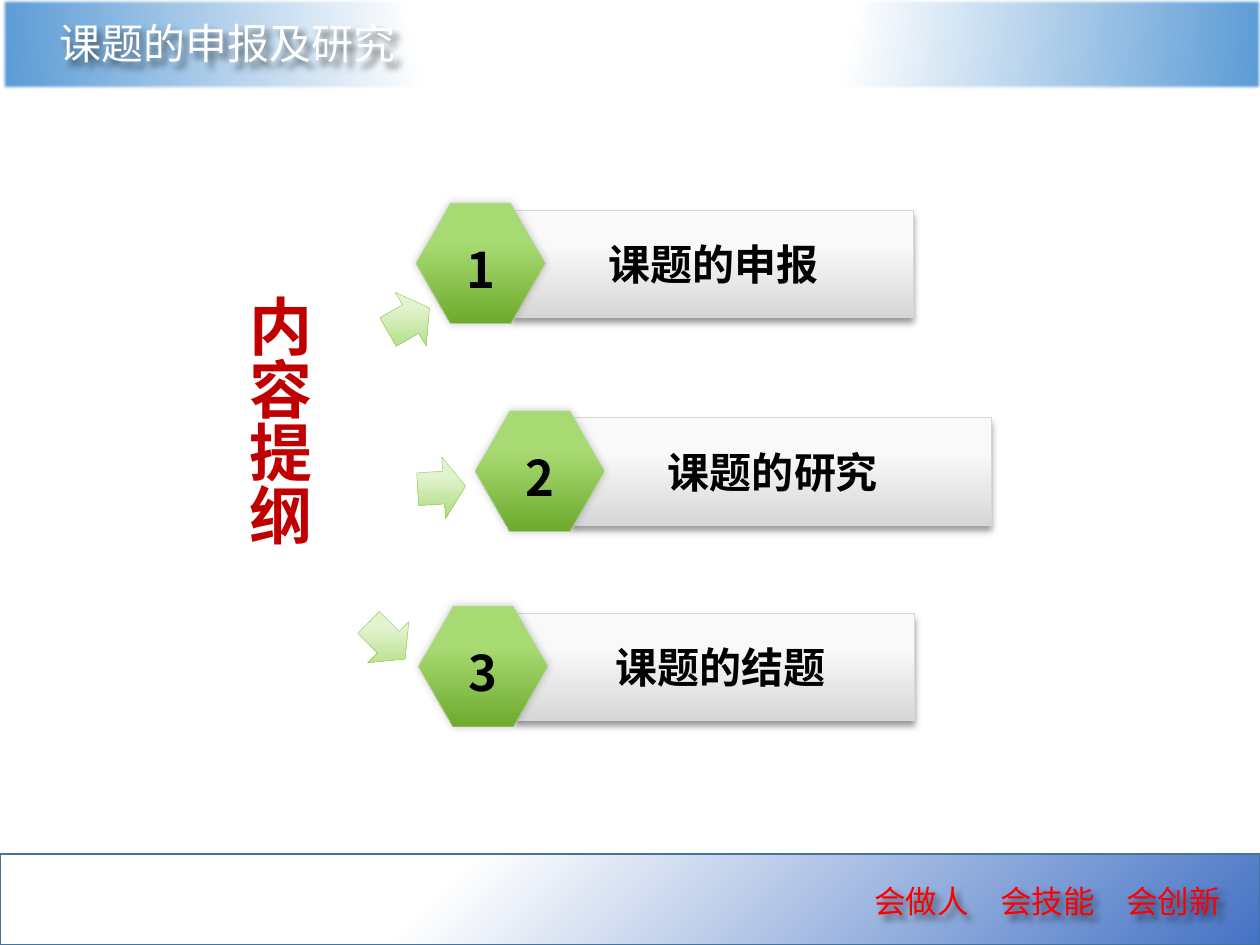
from pptx import Presentation
from pptx.dml.color import RGBColor
from pptx.enum.shapes import MSO_SHAPE
from pptx.enum.text import MSO_ANCHOR, MSO_AUTO_SIZE, PP_ALIGN
from pptx.oxml import parse_xml
from pptx.oxml.ns import nsdecls, qn
from pptx.util import Inches, Pt

RECT, HEX, ARROW = MSO_SHAPE.RECTANGLE, MSO_SHAPE.HEXAGON, MSO_SHAPE.UP_ARROW
LEFT, CENTER = PP_ALIGN.LEFT, PP_ALIGN.CENTER
TOP, MIDDLE = MSO_ANCHOR.TOP, MSO_ANCHOR.MIDDLE

TITLE = "课题的申报及研究"
SIDE = "内容提纲"
MOTTO = ["会做人", "会技能", "会创新"]
# label, hexagon left/top, bar width, label shift, arrow left/top/width/height/turn
STEPS = [
    ("课题的申报", 3.30, 1.61, 3.18, 0, (3.00, 2.35, 0.49, 0.38, 60)),
    ("课题的研究", 3.77, 3.26, 3.33, -0.07, (3.26, 3.68, 0.49, 0.38, 86.3)),
    ("课题的结题", 3.32, 4.81, 3.17, 0.04, (2.84, 4.88, 0.46, 0.41, 135.1)),
]

THEME = {
    "font": "Noto Sans CJK SC", "motto font": "Noto Sans CJK JP",
    "white": "FFFFFF", "black": "000000", "red": "FF0000", "dark red": "C00000",
    "edge": "D7D7D7", "arrow edge": "92D050", "foot edge": "43739E",
    "bar": [(33, "F9F9F9"), (100, "D7D7D7")],
    "hex": [(33, "A8DA73"), (100, "6DAA2D")],
    "arrow": [(0, "E2F3D0"), (33, "E2F3D0"), (100, "A8DA73")],
    "head": [(0, "FFFFFF"), (35, "FFFFFF"), (100, "5B9BD5")],
    "foot": [(0, "FFFFFF"), (35, "FFFFFF"), (100, "4472C4")],
    "motto size": 18, "size": 24, "number size": 28, "side size": 36,
}
# alpha, blur, distance, direction
BAR_SHADE, HEX_SHADE = (40, 4, 3, 90), (20, 5, 0, 0)
FOOT_SHADE, TEXT_SHADE = (38, 4, 4, 90), (50, 4, 4, 45)
HEX_W, HEX_H, BAR_H, BAR_DX = 1.03, 0.96, 0.85, 0.77


def shade(shape, alpha, blur, dist, turn):
    shape.shadow.inherit = False
    shape.element.spPr.find(qn("a:effectLst")).append(parse_xml(
        f'<a:outerShdw {nsdecls("a")} blurRad="{Pt(blur)}" dist="{Pt(dist)}" '
        f'dir="{turn * 60000}" algn="ctr" rotWithShape="0"><a:srgbClr val="000000">'
        f'<a:alpha val="{alpha * 1000}"/></a:srgbClr></a:outerShdw>'))


def blend(shape, stops, focus=None):
    """Fill top to bottom, or outward from a focus rectangle (l, t, r, b in percent)."""
    marks = "".join(f'<a:gs pos="{at * 1000}"><a:srgbClr val="{tone}"/></a:gs>'
                    for at, tone in stops)
    way = '<a:lin ang="5400000" scaled="0"/>'
    if focus:
        sides = " ".join(f'{s}="{v * 1000}"' for s, v in zip("ltrb", focus))
        way = f'<a:path path="circle"><a:fillToRect {sides}/></a:path>'
    shape.fill.background()
    blank = shape.element.spPr.find(qn("a:noFill"))
    blank.getparent().replace(blank, parse_xml(
        f'<a:gradFill {nsdecls("a")} rotWithShape="0"><a:gsLst>{marks}</a:gsLst>'
        f'{way}</a:gradFill>'))


def place(shape, left, top, width, height):
    shape.left, shape.top = Inches(left), Inches(top)
    shape.width, shape.height = Inches(width), Inches(height)


def draw(slide, kind, box, stops, edge=None, weight=0.25, focus=None, shadow=None):
    shape = slide.shapes.add_shape(kind, *map(Inches, box))
    blend(shape, stops, focus)
    if edge:
        shape.line.color.rgb = RGBColor.from_string(edge)
        shape.line.width = Pt(weight)
    else:
        shape.line.fill.background()
    shape.shadow.inherit = False
    if shadow:
        shade(shape, *shadow)
    return shape


def write(shape, text, size, tone, align=CENTER, anchor=MIDDLE, bold=False, face="font"):
    frame = shape.text_frame
    frame.text = text
    frame.word_wrap = True
    frame.vertical_anchor = anchor
    para = frame.paragraphs[0]
    para.alignment = align
    font = para.font
    font.size, font.bold, font.name = Pt(THEME[size]), bold, THEME[face]
    font.color.rgb = RGBColor.from_string(THEME[tone])
    para._p.pPr.find(qn("a:defRPr")).find(qn("a:latin")).addnext(
        parse_xml(f'<a:ea {nsdecls("a")} typeface="{THEME[face]}"/>'))
    return para


def add_bands(slide):
    draw(slide, RECT, (0, 6.78, 10, 0.72), THEME["foot"], THEME["foot edge"], 1,
         (0, 0, 100, 100), FOOT_SHADE)
    head = draw(slide, RECT, (0.01, -0.01, 10, 0.72), THEME["head"],
                focus=(50, -80, 50, 180))
    head.element.spPr.find(qn("a:effectLst")).append(
        parse_xml(f'<a:softEdge {nsdecls("a")} rad="{Pt(2)}"/>'))

    motto = slide.shapes.add_textbox(*map(Inches, (6.84, 6.95, 3.16, 0.4)))
    motto.text_frame.text = ""
    stops = "".join(f'<a:tab pos="{Inches(at)}" algn="l"/>' for at in (1.04, 2.12))
    motto.text_frame.paragraphs[0]._p.get_or_add_pPr().append(
        parse_xml(f'<a:tabLst {nsdecls("a")}>{stops}</a:tabLst>'))
    write(motto, "\t".join(MOTTO), "motto size", "red", LEFT, TOP, face="motto font")
    shade(motto, *TEXT_SHADE)


def add_title(slide):
    title = slide.shapes.title
    title.element.getparent().append(title.element)  # in front of the band
    place(title, 0.37, 0.09, 3.27, 0.5)
    write(title, TITLE, "size", "white", LEFT, TOP)
    title.text_frame.auto_size = MSO_AUTO_SIZE.NONE
    shade(title, *TEXT_SHADE)


def add_step(slide, number, label, left, top, width, shift, arrow):
    *box, turn = arrow
    mark = draw(slide, ARROW, box, THEME["arrow"], THEME["arrow edge"])
    mark.rotation = turn
    mark.adjustments[0], mark.adjustments[1] = 0.528, 0.459

    bar = draw(slide, RECT, (left + BAR_DX, top + (HEX_H - BAR_H) / 2, width, BAR_H),
               THEME["bar"], THEME["edge"], shadow=BAR_SHADE)
    write(bar, label, "size", "black", bold=True)
    bar.text_frame.margin_left = Inches(0.1 + shift)
    bar.text_frame.margin_right = Inches(0.1 - shift)

    badge = draw(slide, HEX, (left, top, HEX_W, HEX_H), THEME["hex"], THEME["edge"],
                 shadow=HEX_SHADE)
    badge.adjustments[0] = 0.287
    write(badge, str(number), "number size", "black", bold=True).line_spacing = 1.2


def add_side(slide):
    side = slide.shapes.add_textbox(*map(Inches, (1.76, 2.24, 0.8, 2.2)))
    write(side, SIDE, "side size", "dark red", anchor=TOP, bold=True)
    side.text_frame._txBody.bodyPr.set("vert", "eaVert")


def main():
    deck = Presentation()
    deck.slide_width, deck.slide_height = Inches(10), Inches(7.5)
    slide = deck.slides.add_slide(deck.slide_layouts[5])
    add_bands(slide)
    add_title(slide)
    for number, step in enumerate(STEPS, 1):
        add_step(slide, number, *step)
    add_side(slide)
    deck.save("out.pptx")


if __name__ == "__main__":
    main()
